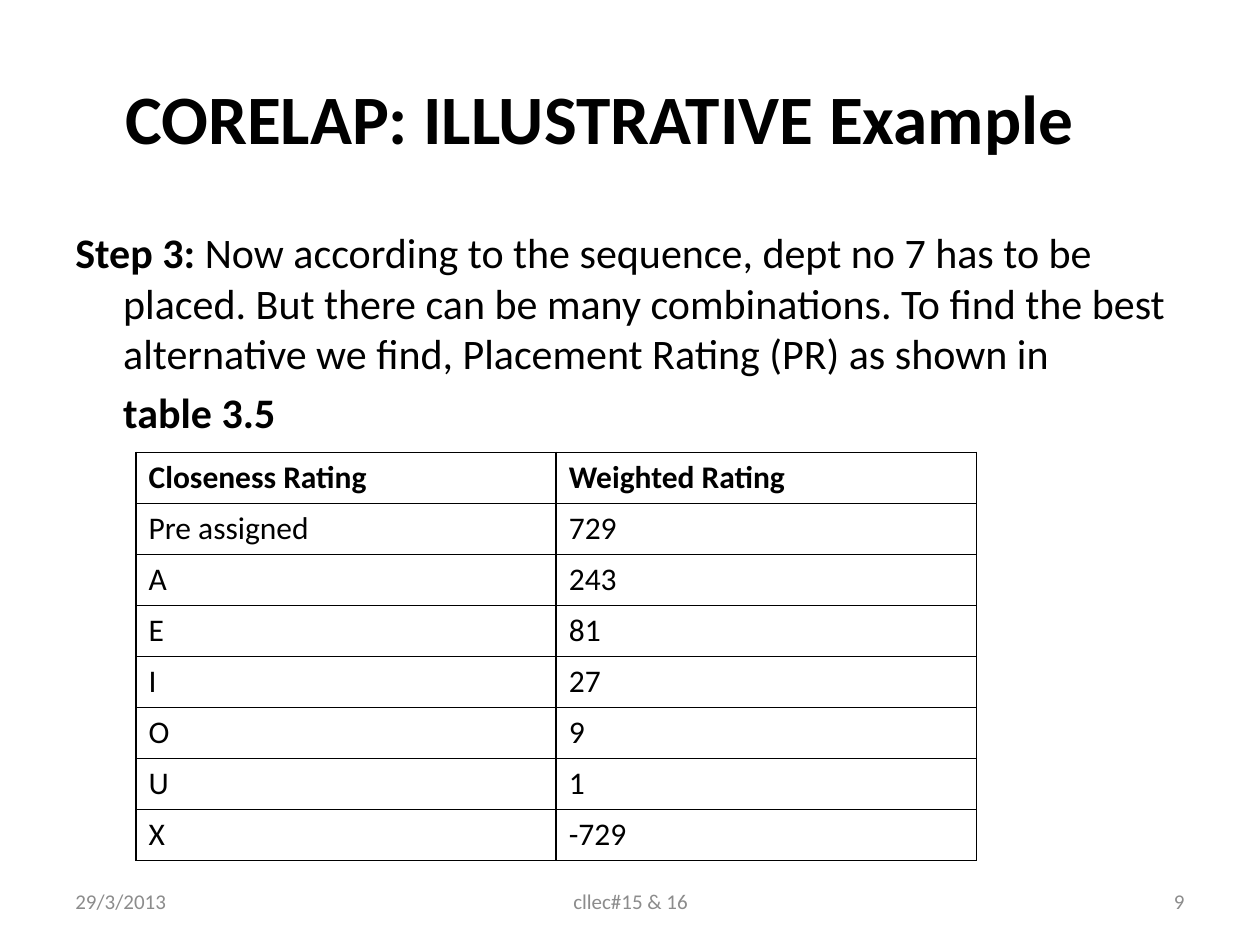
from dataclasses import dataclass

from lxml.etree import SubElement
from pptx import Presentation
from pptx.dml.color import RGBColor
from pptx.enum.text import MSO_ANCHOR, PP_ALIGN
from pptx.oxml.ns import qn
from pptx.util import Inches, Pt

BLACK = RGBColor(0x00, 0x00, 0x00)
GREY = RGBColor(0x8C, 0x8C, 0x8C)
WHITE = RGBColor(0xFF, 0xFF, 0xFF)


@dataclass
class Span:
    text: str
    size: float
    bold: bool = False
    color: RGBColor = BLACK


@dataclass
class Line:
    spans: list[Span]
    align: PP_ALIGN = PP_ALIGN.LEFT
    left: float = 0
    indent: float = 0
    before: float = 0


@dataclass
class Box:
    left: float
    top: float
    width: float
    height: float
    lines: list[Line]
    anchor: MSO_ANCHOR = MSO_ANCHOR.MIDDLE
    inset: float = 0.1  # right margin


def add_span(para, span: Span) -> None:
    run = para.add_run()
    run.text = span.text
    form = {"name": "Calibri", "size": Pt(span.size), "bold": span.bold}
    for key, value in form.items():
        setattr(run.font, key, value)
    run.font.color.rgb = span.color


def add_box(slide, box: Box) -> None:
    shape = slide.shapes.add_textbox(
        Inches(box.left), Inches(box.top), Inches(box.width), Inches(box.height))
    frame = shape.text_frame
    form = {"word_wrap": True, "vertical_anchor": box.anchor,
            "margin_right": Inches(box.inset)}
    for key, value in form.items():
        setattr(frame, key, value)
    for i, line in enumerate(box.lines):
        para = frame.add_paragraph() if i else frame.paragraphs[0]
        para.alignment = line.align
        para.space_before = Pt(line.before)
        props = para._p.get_or_add_pPr()
        props.set("marL", str(Inches(line.left)))
        props.set("indent", str(Inches(line.indent)))
        for span in line.spans:
            add_span(para, span)


def add_edges(cell) -> None:
    props = cell._tc.get_or_add_tcPr()
    for i, side in enumerate(("lnL", "lnR", "lnT", "lnB")):
        edge = SubElement(props, qn(f"a:{side}"), w=str(Pt(1)))
        fill = SubElement(edge, qn("a:solidFill"))
        SubElement(fill, qn("a:srgbClr"), val=str(BLACK))
        props.insert(i, edge)  # edges come before the cell fill


def add_grid(slide, rows: list[tuple[str, str]]) -> None:
    high = 0.405
    table = slide.shapes.add_table(
        len(rows), 2, Inches(1.08), Inches(3.59),
        Inches(6.67), Inches(high * len(rows))).table
    table.first_row = table.horz_banding = False
    for r, row in enumerate(rows):
        table.rows[r].height = Inches(high)
        for c, text in enumerate(row):
            cell = table.cell(r, c)
            cell.fill.solid()
            cell.fill.fore_color.rgb = WHITE
            add_span(cell.text_frame.paragraphs[0], Span(text, 18, r == 0))
            add_edges(cell)


def foot(left: float, width: float, text: str, align: PP_ALIGN) -> Box:
    return Box(left, 6.95, width, 0.4, [Line([Span(text, 12, color=GREY)], align)])


TITLE = Box(0.5, 0.3, 9, 1.25, [
    Line([Span("CORELAP: ILLUSTRATIVE Example", 39.6, True)], PP_ALIGN.CENTER),
], inset=0.58)

BODY = Box(0.5, 1.75, 9, 1.8, [
    Line([
        Span("Step 3:", 24, True),
        Span(" Now according to the sequence, dept no 7 has to be placed. "
             "But there can be many combinations. To find the best alternative "
             "we find, Placement Rating (PR) as shown in", 24),
    ], left=0.38, indent=-0.38, before=4.8),
    Line([Span("table 3.5", 24, True)], left=0.38, before=4.8),
], MSO_ANCHOR.TOP)

FEET = [
    foot(0.5, 2.33, "29/3/2013", PP_ALIGN.LEFT),
    foot(3.42, 3.17, "cllec#15 & 16", PP_ALIGN.CENTER),
    foot(7.17, 2.33, "9", PP_ALIGN.RIGHT),
]

RATINGS = [
    ("Closeness Rating", "Weighted Rating"),
    ("Pre assigned", "729"),
    ("A", "243"),
    ("E", "81"),
    ("I", "27"),
    ("O", "9"),
    ("U", "1"),
    ("X", "-729"),
]


def main() -> None:
    deck = Presentation()
    deck.slide_width, deck.slide_height = Inches(10), Inches(7.5)
    slide = deck.slides.add_slide(deck.slide_layouts[6])

    # Title, body and footer
    for box in (TITLE, BODY, *FEET):
        add_box(slide, box)

    # Rating table
    add_grid(slide, RATINGS)
    deck.save("out.pptx")


if __name__ == "__main__":
    main()
